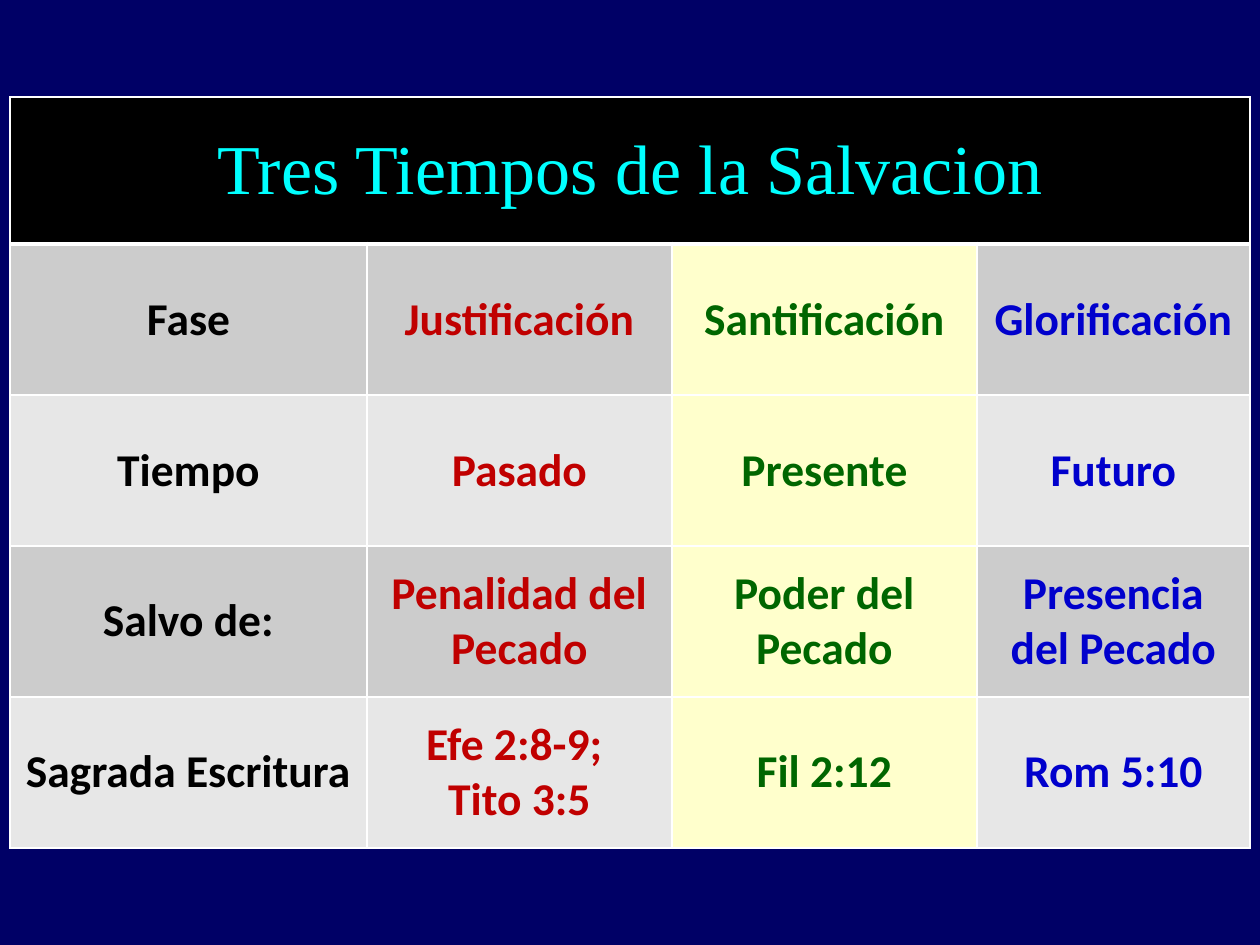
"""Build a slide with a table of the three tenses of salvation."""
from lxml.etree import SubElement
from pptx import Presentation
from pptx.dml.color import RGBColor as RGB
from pptx.enum.text import MSO_ANCHOR as Anchor, PP_ALIGN as Align
from pptx.oxml.ns import qn
from pptx.util import Emu, Pt

PX = 914400 // 126
COLORS = {
    "background": "000066", "heading_fill": "000000", "heading": "00FFFF",
    "dark_band": "CCCCCC", "light_band": "E7E7E7", "highlight": "FFFFCC",
    "border": "FFFFFF", "label": "000000", "past": "C00000",
    "present": "006600", "future": "0000CC",
}
COLUMN_WIDTHS = [357, 305, 305, 273]
ROW_HEIGHTS = [147, 151, 151, 151, 151]
COLUMN_COLORS = ["label", "past", "present", "future"]
HEADING = "Tres Tiempos de la Salvacion"
PHASES = [
    ["Fase", "Justificación", "Santificación", "Glorificación"],
    ["Tiempo", "Pasado", "Presente", "Futuro"],
    ["Salvo de:", "Penalidad del Pecado", "Poder del Pecado", "Presencia del Pecado"],
    ["Sagrada Escritura", "Efe 2:8-9; \nTito 3:5", "Fil 2:12", "Rom 5:10"],
]


def add_borders(cell, top, bottom):
    props = cell._tc.get_or_add_tcPr()
    for side, width in (("L", 1), ("R", 1), ("T", top), ("B", bottom)):
        line = SubElement(props, qn(f"a:ln{side}"), w=str(Pt(width)))
        fill = SubElement(line, qn("a:solidFill"))
        SubElement(fill, qn("a:srgbClr"), val=COLORS["border"])


def write_cell(cell, text, fill, color, font, size, bold):
    cell.fill.solid()
    cell.fill.fore_color.rgb = RGB.from_string(COLORS[fill])
    cell.vertical_anchor = Anchor.MIDDLE
    cell.text_frame.text = text
    for paragraph in cell.text_frame.paragraphs:
        paragraph.alignment = Align.CENTER
        for run in paragraph.runs:
            run.font.name = font
            run.font.size = Pt(size)
            run.font.bold = bold
            run.font.color.rgb = RGB.from_string(COLORS[color])


prs = Presentation()
prs.slide_width = Emu(1260 * PX)
prs.slide_height = Emu(945 * PX)
slide = prs.slides.add_slide(prs.slide_layouts[6])
slide.background.fill.solid()
slide.background.fill.fore_color.rgb = RGB.from_string(COLORS["background"])

salvation = slide.shapes.add_table(
    len(ROW_HEIGHTS), len(COLUMN_WIDTHS), Emu(10 * PX), Emu(97 * PX),
    Emu(sum(COLUMN_WIDTHS) * PX), Emu(sum(ROW_HEIGHTS) * PX)).table
for column, width in zip(salvation.columns, COLUMN_WIDTHS):
    column.width = Emu(width * PX)
for row, height in zip(salvation.rows, ROW_HEIGHTS):
    row.height = Emu(height * PX)

for r, row in enumerate(salvation.rows):
    for cell in row.cells:
        add_borders(cell, 3 if r == 1 else 1, 3 if r == 0 else 1)

heading = salvation.cell(0, 0)
heading.merge(salvation.cell(0, len(COLUMN_WIDTHS) - 1))
write_cell(heading, HEADING, "heading_fill", "heading", "Times New Roman", 40, False)

for r, phase in enumerate(PHASES, start=1):
    band = "dark_band" if r % 2 else "light_band"
    for c, (text, color) in enumerate(zip(phase, COLUMN_COLORS)):
        fill = "highlight" if color == "present" else band
        write_cell(salvation.cell(r, c), text, fill, color, "Calibri", 26, True)

prs.save("out.pptx")
